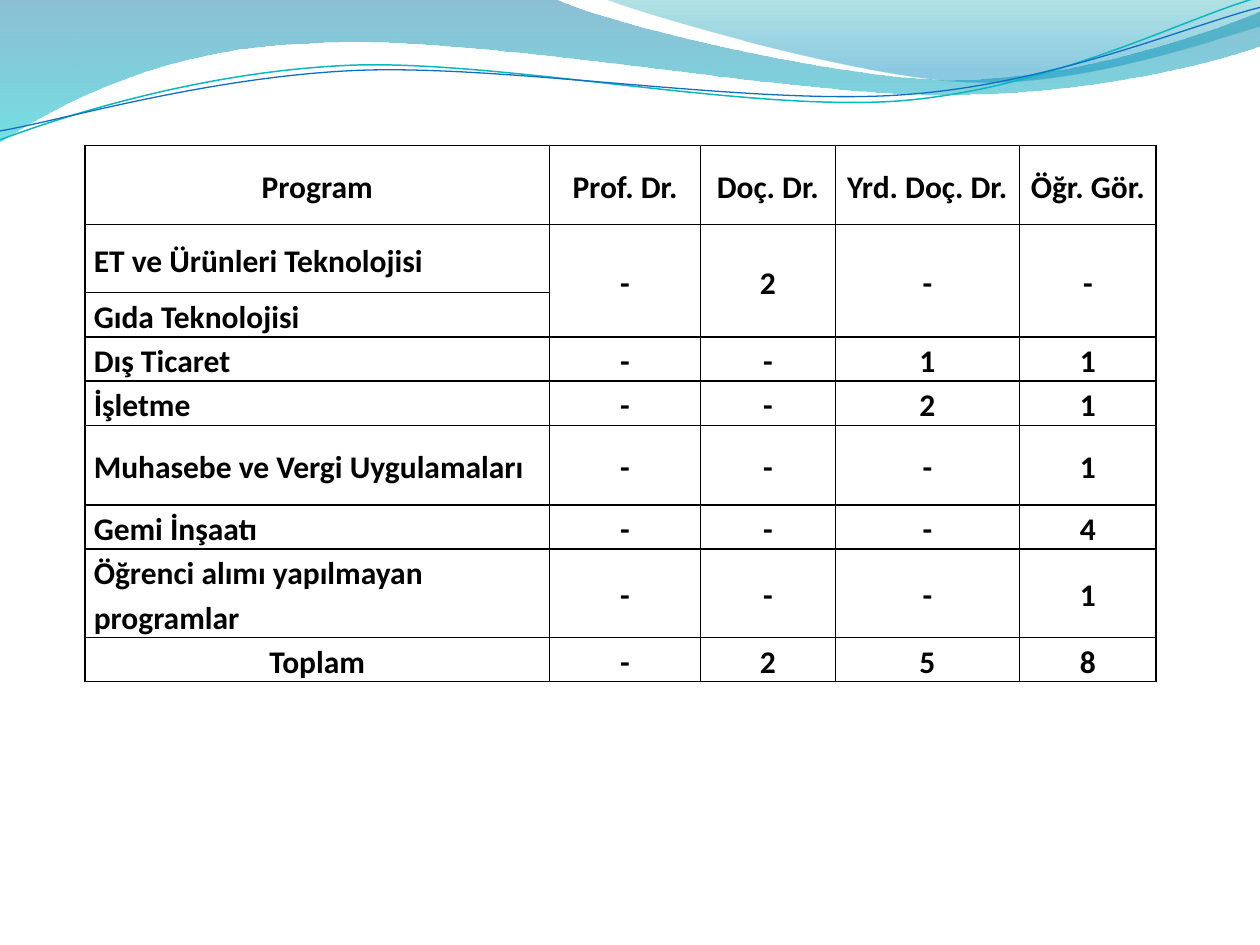
from dataclasses import dataclass

from pptx import Presentation
from pptx import util as u
from pptx.dml.color import RGBColor
from pptx.enum import text
from pptx.oxml import parse_xml
from pptx.oxml.ns import nsdecls, qn
from lxml import etree


@dataclass(frozen=True)
class Theme:
    font: str = "Calibri"
    size: int = 18
    ink: str = "000000"
    teal_line: str = "0AB8BF"
    blue_line: str = "0F6FC6"
    curve_tilt: float = -2.7
    # Gradient stops: position, colour, opacity in percent
    wide_wave: tuple = ((0, "0074A1", 45), (1, "00C6CF", 55))
    right_wave: tuple = ((0, "00A1A9", 30), (0.8, "008BBF", 45))


class SlideBuilder:
    def __init__(self, slide, theme):
        self.slide = slide
        self.theme = theme

    def outline(self, start, segments, closed):
        """Segments hold one point for a straight line, three for a curve."""
        points = [(u.Cm(x), u.Cm(y)) for segment in segments for x, y in segment]
        builder = self.slide.shapes.build_freeform(u.Cm(start[0]), u.Cm(start[1]))
        builder.add_line_segments(points, close=closed)
        shape = builder.convert_to_shape()
        shape.shadow.inherit = False
        # Join each run of three points into one cubic curve
        lines = iter(list(shape._element.iter(qn("a:lnTo"))))
        for segment in segments:
            first, *others = [next(lines) for _ in segment]
            if others:
                first.tag_curve = None
                curve = etree.Element(qn("a:cubicBezTo"))
                first.addprevious(curve)
                for line in (first, *others):
                    curve.append(line[0])
                    line.getparent().remove(line)
        return shape

    def wave(self, start, segments, stops):
        shape = self.outline(start, segments, closed=True)
        shape.line.fill.background()
        shape.fill.gradient()
        shape.fill.gradient_angle = 270
        for stop, (position, color, _) in zip(shape.fill.gradient_stops, stops):
            stop.position = position
            stop.color.rgb = RGBColor.from_string(color)
        colors = shape._element.spPr.iter(qn("a:srgbClr"))
        for element, (_, _, opacity) in zip(colors, stops):
            etree.SubElement(element, qn("a:alpha"), val=str(opacity * 1000))

    def curve(self, start, segments, color, width):
        shape = self.outline(start, segments, closed=False)
        shape.rotation = self.theme.curve_tilt
        shape.fill.background()
        shape.line.color.rgb = RGBColor.from_string(color)
        shape.line.width = u.Pt(width)

    def table(self, left, top, widths, heights, rows):
        frame = self.slide.shapes.add_table(
            len(rows), len(widths), u.Cm(left), u.Cm(top), u.Cm(sum(widths)), u.Cm(sum(heights))
        )
        table = frame.table
        table.first_row = table.horz_banding = False
        for column, width in zip(table.columns, widths):
            column.width = u.Cm(width)
        for row, height in zip(table.rows, heights):
            row.height = u.Cm(height)
        for row_index, values in enumerate(rows):
            for column_index, value in enumerate(values):
                is_name = column_index == 0 and 0 < row_index < len(rows) - 1
                align = text.PP_ALIGN.LEFT if is_name else text.PP_ALIGN.CENTER
                self.cell(table.cell(row_index, column_index), value, align)
        return table

    def cell(self, cell, value, align):
        cell.text = value
        cell.vertical_anchor = text.MSO_ANCHOR.MIDDLE
        cell.margin_left = cell.margin_right = u.Cm(0.18)
        cell.margin_top = cell.margin_bottom = 0
        paragraph = cell.text_frame.paragraphs[0]
        paragraph.alignment = align
        paragraph.line_spacing = 1.15
        font = paragraph.font
        font.name, font.size, font.bold = self.theme.font, u.Pt(self.theme.size), True
        font.color.rgb = RGBColor.from_string(self.theme.ink)
        properties = cell._tc.get_or_add_tcPr()
        for side in ("lnL", "lnR", "lnT", "lnB"):
            properties.append(parse_xml(
                f'<a:{side} {nsdecls("a")} w="{u.Pt(1)}"><a:solidFill>'
                f'<a:srgbClr val="{self.theme.ink}"/></a:solidFill></a:{side}>'
            ))
        cell.fill.background()


def main():
    presentation = Presentation()
    presentation.slide_width, presentation.slide_height = u.Cm(25.4), u.Cm(19.05)
    theme = Theme()
    slide = presentation.slides.add_slide(presentation.slide_layouts[6])
    builder = SlideBuilder(slide, theme)

    # Waves along the top edge
    builder.wave((0, 0), [
        [(11.18, -0.03)],
        [(12.09, 0.43), (16.87, 1.6), (19.25, 1.6)],
        [(21.67, 1.6), (24.33, 0.66), (25.4, 0.23)],
        [(25.43, 0.91)],
        [(24.97, 1.12), (22.1, 1.93), (18.95, 1.91)],
        [(15.8, 1.91), (9.7, 0.71), (6.53, 0.86)],
        [(3.28, 0.91), (1.17, 2.11), (-0.03, 2.87)],
        [(0, 0)],
    ], theme.wide_wave)
    builder.wave((12.17, -0.03), [
        [(12.93, 0.28), (17.32, 1.57), (19.53, 1.65)],
        [(21.74, 1.75), (24.41, 0.81), (25.4, 0.53)],
        [(25.4, 0)],
        [(12.17, -0.03)],
    ], theme.right_wave)

    # Thin tilted curves under the waves
    builder.curve((-0.05, 2.22), [
        [(1.19, 1.82), (4.02, 1.04), (7.05, 1.05)],
        [(10.05, 1.07), (15.02, 2.37), (18.08, 2.29)],
        [(21.13, 2.2), (23.87, 0.91), (25.41, 0.55)],
    ], theme.teal_line, 0.85)
    builder.curve((-0.04, 2.04), [
        [(1.16, 1.9), (4.18, 1.15), (7.2, 1.16)],
        [(10.25, 1.18), (15.13, 2.25), (18.18, 2.17)],
        [(21.21, 2.1), (23.93, 1.06), (25.45, 0.75)],
    ], theme.blue_line, 0.75)

    # Staff by program; the first two programs share their counts
    low, high = 0.81, 1.6
    staff = builder.table(
        1.71, 2.93,
        widths=[9.37, 3.04, 2.72, 3.71, 2.76],
        heights=[high, 1.37, low, low, low, high, low, high, low],
        rows=[
            ["Program", "Prof. Dr.", "Doç. Dr.", "Yrd. Doç. Dr.", "Öğr. Gör."],
            ["ET ve Ürünleri Teknolojisi", "-", "2", "-", "-"],
            ["Gıda Teknolojisi", "", "", "", ""],
            ["Dış Ticaret", "-", "-", "1", "1"],
            ["İşletme", "-", "-", "2", "1"],
            ["Muhasebe ve Vergi Uygulamaları", "-", "-", "-", "1"],
            ["Gemi İnşaatı", "-", "-", "-", "4"],
            ["Öğrenci alımı yapılmayan programlar", "-", "-", "-", "1"],
            ["Toplam", "-", "2", "5", "8"],
        ],
    )
    for column in range(1, 5):
        staff.cell(1, column).merge(staff.cell(2, column))

    presentation.save("out.pptx")


if __name__ == "__main__":
    main()
